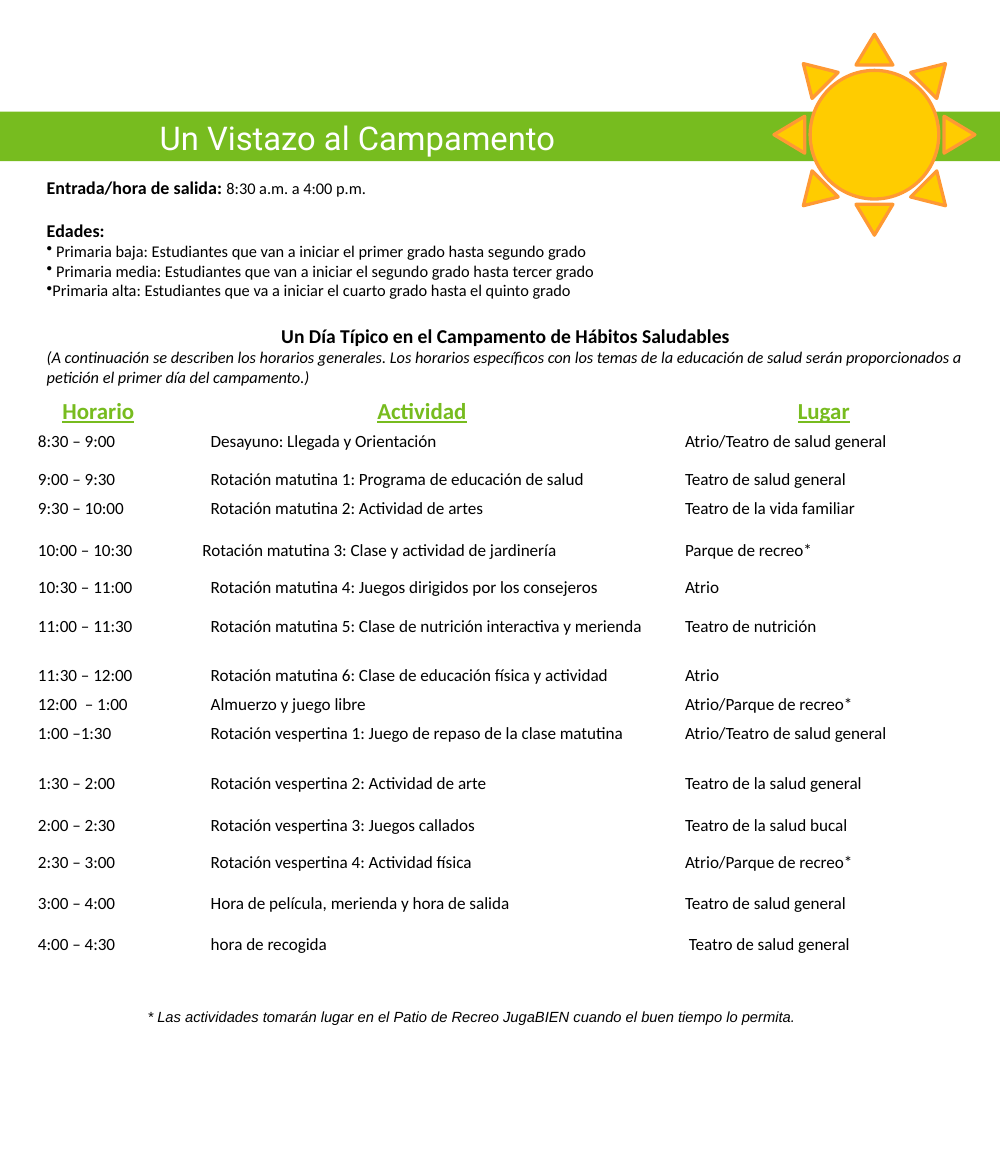
from pptx import Presentation, util as u
from pptx.dml.color import RGBColor
from pptx.enum import shapes, text
from pptx.oxml.ns import qn
from lxml import etree

GREEN, BLACK, WHITE = "77BC1F", "000000", "FFFFFF"
YELLOW, ORANGE = "FFCC00", "FF9933"
CENTER = text.PP_ALIGN.CENTER


def color(code):
    return RGBColor.from_string(code)


class Flyer:
    """Holds the type style and the page being drawn."""

    face = "Calibri"
    ink = BLACK

    def __init__(self, deck):
        self.page = deck.slides.add_slide(deck.slide_layouts[6])

    def shape(self, kind, place, fill, line=None):
        item = self.page.shapes.add_shape(kind, *map(u.Cm, place))
        item.shadow.inherit = False
        item.fill.solid()
        item.fill.fore_color.rgb = color(fill)
        if line:
            item.line.color.rgb = color(line)
            item.line.width = u.Pt(2)
        else:
            item.line.fill.background()
        return item

    def box(self, place):
        frame = self.page.shapes.add_textbox(*map(u.Cm, place)).text_frame
        frame.word_wrap = True
        return frame

    def font(self, font, size, ink=None, face=None, bold=False, italic=False):
        font.size = u.Pt(size)
        font.name = face or self.face
        font.color.rgb = color(ink or self.ink)
        font.bold, font.italic = bold, italic

    def para(self, frame, words, size, before=0, align=None, bullet=False, **style):
        first = frame.paragraphs[0]
        para = frame.add_paragraph() if first.runs else first
        para.add_run().text = words
        para.space_before = u.Pt(before)
        para.alignment = align
        self.font(para.font, size, **style)
        if bullet:
            mark = etree.SubElement(para._p.get_or_add_pPr(), qn("a:buChar"))
            mark.set("char", "•")
            # The bullet must come before the default run properties
            para._p.pPr.find(qn("a:defRPr")).addprevious(mark)
        return para

    def table(self, place, widths, heights):
        rows, cols = len(heights), len(widths)
        grid = self.page.shapes.add_table(rows, cols, *map(u.Cm, place)).table
        grid.first_row = grid.horz_banding = False
        for column, width in zip(grid.columns, widths):
            column.width = u.Cm(width)
        for row, height in zip(grid.rows, heights):
            row.height = u.Cm(height)
        for cell in grid.iter_cells():
            cell.fill.background()
        return grid

    def entry(self, cell, lines, indent=0):
        cell.margin_left = cell.margin_right = u.Cm(0.18)
        cell.margin_top = cell.margin_bottom = 0
        for number, line in enumerate(lines.split("\n")):
            para = self.para(cell.text_frame, line, 10.5, before=12.8 if number else 0)
            if indent:
                para._p.get_or_add_pPr().set("marL", str(u.Cm(indent)))


HEADINGS = ["Horario", "Actividad", "Lugar"]
# Row height in cm, time, activity, place
SCHEDULE = [
    (0.82, "8:30 – 9:00", "Desayuno: Llegada y Orientación", "Atrio/Teatro de salud general"),
    (0.63, "9:00 – 9:30", "Rotación matutina 1: Programa de educación de salud", "Teatro de salud general"),
    (0.91, "9:30 – 10:00", "Rotación matutina 2: Actividad de artes", "Teatro de la vida familiar"),
    (0.8, "10:00 – 10:30", "Rotación matutina 3: Clase y actividad de jardinería", "Parque de recreo*"),
    (0.84, "10:30 – 11:00", "Rotación matutina 4: Juegos dirigidos por los consejeros", "Atrio"),
    (1.06, "11:00 – 11:30", "Rotación matutina 5: Clase de nutrición interactiva y merienda",
     "Teatro de nutrición"),
    (0.63, "11:30 – 12:00", "Rotación matutina 6: Clase de educación física y actividad", "Atrio"),
    (0.63, "12:00  – 1:00", "Almuerzo y juego libre", "Atrio/Parque de recreo*"),
    (1.08, "1:00 –1:30", "Rotación vespertina 1: Juego de repaso de la clase matutina",
     "Atrio/Teatro de salud general"),
    (0.89, "1:30 – 2:00", "Rotación vespertina 2: Actividad de arte", "Teatro de la salud general"),
    (0.8, "2:00 – 2:30", "Rotación vespertina 3: Juegos callados", "Teatro de la salud bucal"),
    (0.89, "2:30 – 3:00", "Rotación vespertina 4: Actividad física", "Atrio/Parque de recreo*"),
    (2.29, "3:00 – 4:00\n4:00 – 4:30", "Hora de película, merienda y hora de salida\nhora de recogida",
     "Teatro de salud general\n Teatro de salud general"),
]
AGES = [
    " Primaria baja: Estudiantes que van a iniciar el primer grado hasta segundo grado",
    " Primaria media: Estudiantes que van a iniciar el segundo grado hasta tercer grado",
    "Primaria alta: Estudiantes que va a iniciar el cuarto grado hasta el quinto grado",
]


def main():
    deck = Presentation()
    deck.slide_width, deck.slide_height = u.Cm(21.59), u.Cm(25.4)
    flyer = Flyer(deck)

    # Title band and sun
    flyer.shape(shapes.MSO_SHAPE.RECTANGLE, (0, 2.41, 21.59, 1.07), GREEN)
    sun = flyer.shape(shapes.MSO_SHAPE.SUN, (16.71, 0.74, 4.34, 4.34), YELLOW, ORANGE)
    sun.adjustments[0] = 0.18
    title = flyer.box((0, 2.41, 15.44, 1.12))
    flyer.para(title, "Un Vistazo al Campamento", 20, align=CENTER, ink=WHITE, face="Roboto")

    # Hours, ages and introduction
    intro = flyer.box((0.76, 3.68, 20.32, 4.83))
    hours = flyer.para(intro, "Entrada/hora de salida: ", 11, bold=True)
    span = hours.add_run()
    span.text = "8:30 a.m. a 4:00 p.m."
    flyer.font(span.font, 10)
    flyer.para(intro, "Edades:", 11, before=13.4, bold=True)
    for age in AGES:
        flyer.para(intro, age, 10, bullet=True)
    flyer.para(intro, "Un Día Típico en el Campamento de Hábitos Saludables", 12,
               before=14.6, align=CENTER, bold=True)
    flyer.para(intro, "(A continuación se describen los horarios generales. Los horarios "
               "específicos con los temas de la educación de salud serán proporcionados a "
               "petición el primer día del campamento.)", 10, italic=True)

    # Schedule
    heights = [0.84] + [row[0] for row in SCHEDULE]
    grid = flyer.table((0.64, 8.46, 20.32, sum(heights)), (2.97, 11, 6.35), heights)
    for col, heading in enumerate(HEADINGS):
        para = flyer.para(grid.cell(0, col).text_frame, heading, 14, align=CENTER,
                          ink=GREEN, bold=True)
        para.font.underline = True
    for row, (_, time, activity, place) in enumerate(SCHEDULE, start=1):
        flyer.entry(grid.cell(row, 0), time)
        # The gardening class sits slightly to the left
        flyer.entry(grid.cell(row, 1), activity, 0.58 if "jardinería" in activity else 0.76)
        flyer.entry(grid.cell(row, 2), place)

    # Footnote
    note = flyer.box((0.23, 21.64, 19.89, 0.64))
    flyer.para(note, "* Las actividades tomarán lugar en el Patio de Recreo JugaBIEN cuando "
               "el buen tiempo lo permita.", 9, align=CENTER, face="Arial", italic=True)

    deck.save("out.pptx")


if __name__ == "__main__":
    main()
